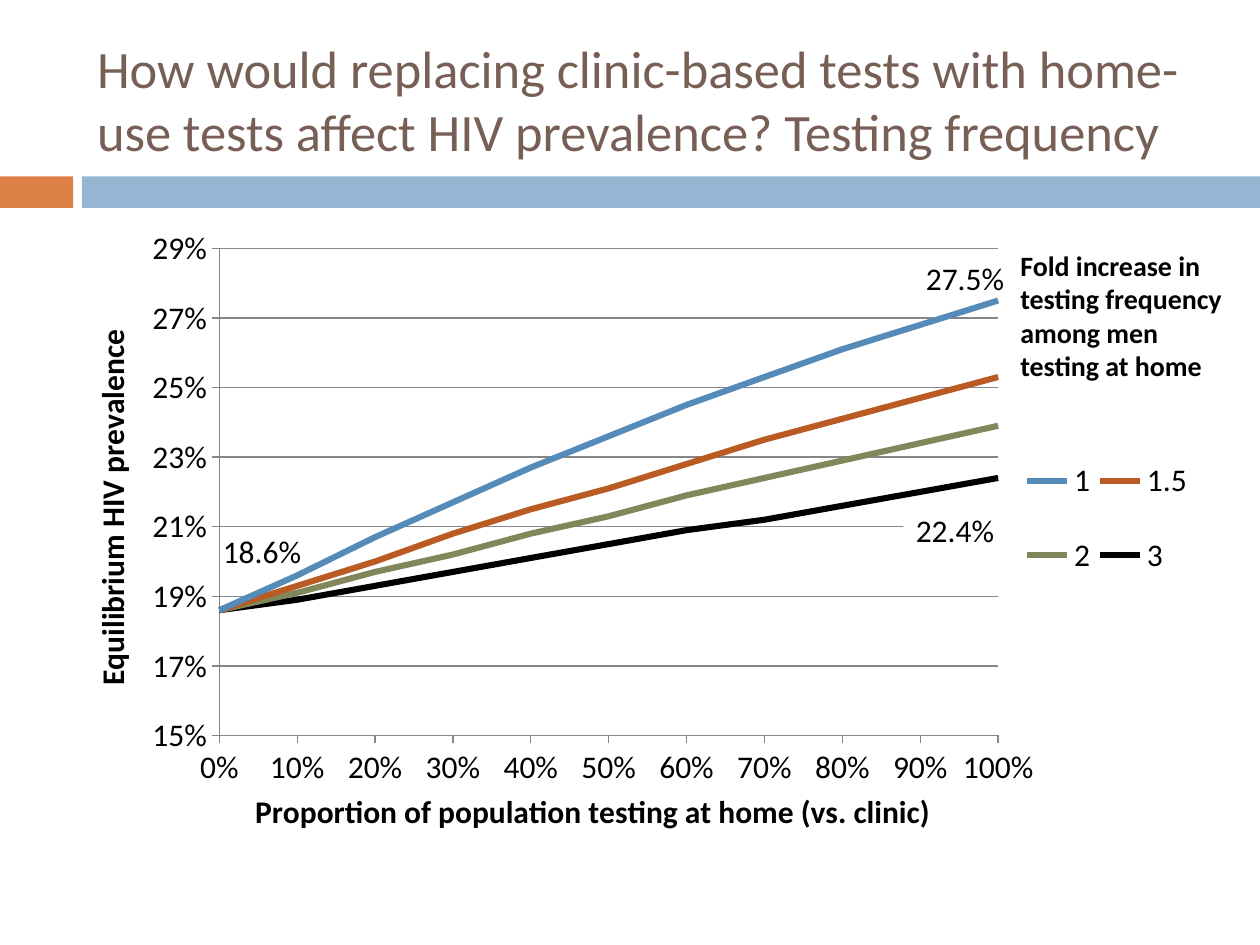
import pptx
import pptx.chart.data
import pptx.dml.color
import pptx.enum.chart
import pptx.enum.shapes
import pptx.enum.text
import pptx.oxml
import pptx.oxml.ns
import pptx.util
from pptx.util import Inches

FONT = "Calibri"
COLORS = {
    "title": "775F55",
    "text": "000000",
    "orange": "DD8047",
    "blue": "94B6D2",
    "white": "FFFFFF",
    "axis": "868686",
}
SERIES = {
    "1": ("558BB8", [18.6, 19.6, 20.7, 21.7, 22.7, 23.6, 24.5, 25.3, 26.1, 26.8, 27.5]),
    "1.5": ("B95B22", [18.6, 19.3, 20, 20.8, 21.5, 22.1, 22.8, 23.5, 24.1, 24.7, 25.3]),
    "2": ("81875A", [18.6, 19.1, 19.7, 20.2, 20.8, 21.3, 21.9, 22.4, 22.9, 23.4, 23.9]),
    "3": ("000000", [18.6, 18.9, 19.3, 19.7, 20.1, 20.5, 20.9, 21.2, 21.6, 22, 22.4]),
}


def rgb(color):
    return pptx.dml.color.RGBColor.from_string(color)


def style_font(font, size, color=COLORS["text"], bold=False):
    font.name = FONT
    font.size = pptx.util.Pt(size)
    font.bold = bold
    font.color.rgb = rgb(color)


def add_run(paragraph, text, size, color=COLORS["text"], bold=False):
    run = paragraph.add_run()
    run.text = text
    style_font(run.font, size, color, bold)


def place(shape, left, top, width, height):
    shape.left, shape.top = Inches(left), Inches(top)
    shape.width, shape.height = Inches(width), Inches(height)


def add_title(slide, text):
    title = slide.shapes.title
    place(title, 0.67, 0.25, 8.92, 1.08)
    frame = title.text_frame
    frame.word_wrap = True
    frame.auto_size = pptx.enum.text.MSO_AUTO_SIZE.NONE
    frame.vertical_anchor = pptx.enum.text.MSO_ANCHOR.MIDDLE
    paragraph = frame.paragraphs[0]
    paragraph.alignment = pptx.enum.text.PP_ALIGN.LEFT
    add_run(paragraph, text, 30, COLORS["title"])


def add_bar(slide, left, width, color):
    bar = slide.shapes.add_shape(
        pptx.enum.shapes.MSO_SHAPE.RECTANGLE,
        Inches(left), Inches(1.4), Inches(width), Inches(0.25),
    )
    bar.shadow.inherit = False
    bar.fill.solid()
    bar.fill.fore_color.rgb = rgb(color)
    bar.line.fill.background()


def add_label(slide, text, box, size=18, bold=False, fill=None):
    label = slide.shapes.add_textbox(*map(Inches, box))
    label.text_frame.word_wrap = True
    if fill:
        label.fill.solid()
        label.fill.fore_color.rgb = rgb(fill)
    add_run(label.text_frame.paragraphs[0], text, size, bold=bold)


def set_layout(parent, index, box, inner=False):
    for layout in parent.findall(pptx.oxml.ns.qn("c:layout")):
        parent.remove(layout)
    target = '<c:layoutTarget val="inner"/>' if inner else ""
    modes = '<c:xMode val="edge"/><c:yMode val="edge"/>'
    sizes = "".join(f'<c:{name} val="{value}"/>' for name, value in zip("xywh", box))
    parent.insert(index, pptx.oxml.parse_xml(
        f'<c:layout {pptx.oxml.ns.nsdecls("c")}><c:manualLayout>'
        f"{target}{modes}{sizes}</c:manualLayout></c:layout>"
    ))


def style_axis(axis, title, minimum, maximum, step, gridlines):
    axis.minimum_scale, axis.maximum_scale = minimum, maximum
    axis.major_unit = step
    axis.has_major_gridlines = gridlines
    axis.major_tick_mark = pptx.enum.chart.XL_TICK_MARK.OUTSIDE
    axis.minor_tick_mark = pptx.enum.chart.XL_TICK_MARK.NONE
    axis.tick_labels.number_format = "0%"
    axis.tick_labels.number_format_is_linked = False
    style_font(axis.tick_labels.font, 18)
    axis.format.line.color.rgb = rgb(COLORS["axis"])
    if gridlines:
        axis.major_gridlines.format.line.color.rgb = rgb(COLORS["axis"])
    add_run(axis.axis_title.text_frame.paragraphs[0], title, 18, bold=True)


def add_prevalence_chart(slide):
    data = pptx.chart.data.XyChartData(number_format="0.0%")
    for name, (_, values) in SERIES.items():
        series = data.add_series(name)
        for step, value in enumerate(values):
            series.add_data_point(step / 10, round(value / 100, 3))
    chart = slide.shapes.add_chart(
        pptx.enum.chart.XL_CHART_TYPE.XY_SCATTER_SMOOTH_NO_MARKERS,
        Inches(0.67), Inches(1.75), Inches(8.92), Inches(4.92), data,
    ).chart
    chart.has_title = False
    style_font(chart.font, 18)
    plot = chart.plots[0]
    plot.vary_by_categories = False
    for series, (color, _) in zip(plot.series, SERIES.values()):
        series.smooth = True
        series.marker.style = pptx.enum.chart.XL_MARKER_STYLE.NONE
        series.format.line.width = pptx.util.Pt(3.5)
        series.format.line.color.rgb = rgb(color)

    style_axis(chart.category_axis, "Proportion of population testing at home (vs. clinic)",
               0, 1, 0.1, False)
    style_axis(chart.value_axis, "Equilibrium HIV prevalence", 0.15, 0.29, 0.02, True)
    body = chart.value_axis.axis_title.text_frame._txBody.bodyPr
    body.set("rot", "-5400000")
    body.set("vert", "horz")

    chart.has_legend = True
    chart.legend.position = pptx.enum.chart.XL_LEGEND_POSITION.RIGHT
    chart.legend.include_in_layout = False
    style_font(chart.legend.font, 18)
    set_layout(chart.legend._element, 1, (0.83, 0.33, 0.16, 0.3))
    plot_area = chart._chartSpace.find(".//" + pptx.oxml.ns.qn("c:plotArea"))
    set_layout(plot_area, 0, (0.12, 0.045, 0.693, 0.786), inner=True)


def main():
    presentation = pptx.Presentation()
    presentation.slide_width, presentation.slide_height = Inches(10), Inches(7.5)
    slide = presentation.slides.add_slide(presentation.slide_layouts[5])
    add_bar(slide, 0, 0.58, COLORS["orange"])
    add_bar(slide, 0.65, 9.35, COLORS["blue"])
    add_title(slide, "How would replacing clinic-based tests with home-use tests "
                     "affect HIV prevalence? Testing frequency")
    add_prevalence_chart(slide)
    add_label(slide, "27.5%", (7.25, 2.01, 1, 0.4))
    add_label(slide, "22.4%", (7.17, 4.01, 0.83, 0.4), fill=COLORS["white"])
    add_label(slide, "Fold increase in testing frequency among men testing at home",
              (8, 1.92, 1.83, 1.25), size=16, bold=True)
    add_label(slide, "18.6%", (1.67, 4.17, 1, 0.4))
    presentation.save("out.pptx")


if __name__ == "__main__":
    main()
